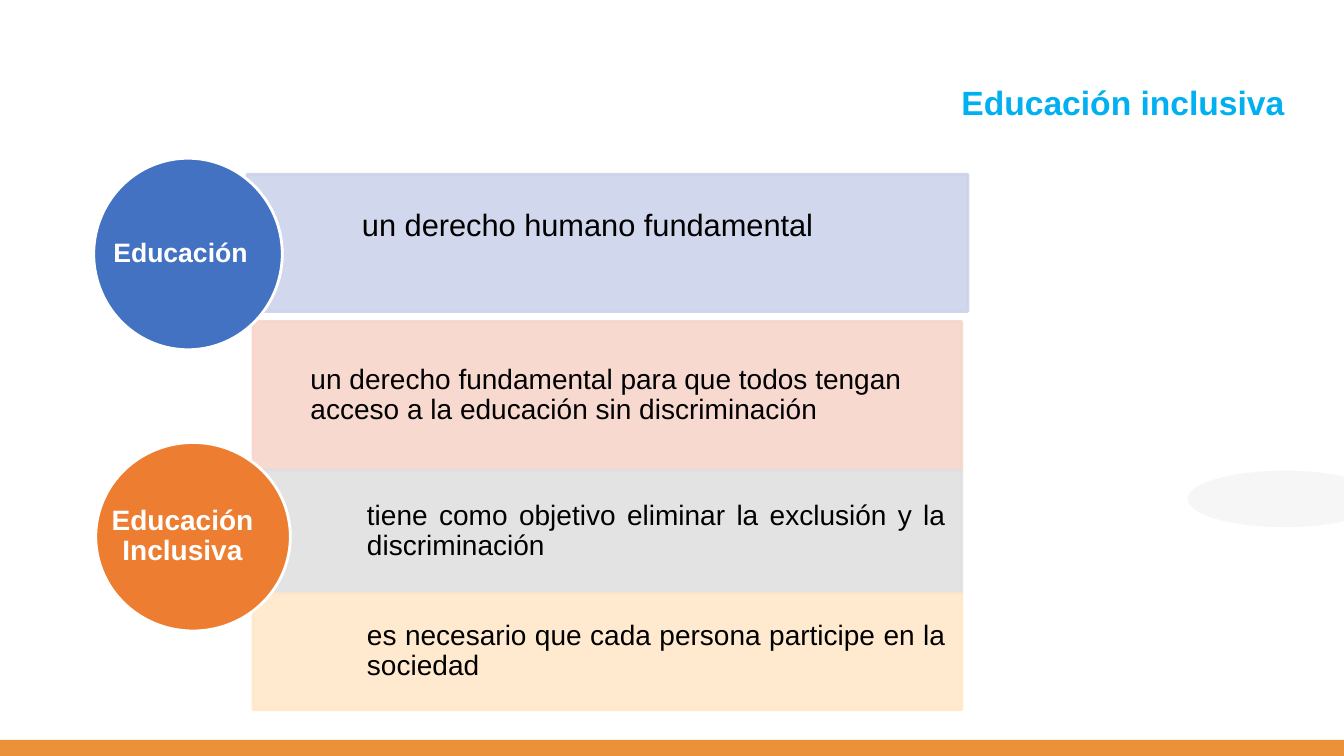
from lxml.etree import SubElement
from pptx import Presentation
from pptx.dml.color import RGBColor as RGB
from pptx.enum.shapes import MSO_SHAPE as Kind
from pptx.enum.text import MSO_ANCHOR as Anchor, PP_ALIGN as Align
from pptx.oxml.ns import qn
from pptx.util import Inches, Pt

WIDE, HIGH = 13.33, 7.5
HUES = {
    "title": "00B0F0", "ink": "000000", "white": "FFFFFF",
    "blue": "4372C3", "orange": "ED7D31", "sky": "CCD3EA",
    "rose": "F7D5CB", "gray": "E0E0E0", "cream": "FFE8CA",
    "foot": "EA9139", "mist": "F5F5F5",
}


def hue(name):
    return RGB.from_string(HUES[name])


def draw(slide, kind, box, fill, line=None, alpha=100):
    shape = slide.shapes.add_shape(kind, *map(Inches, box))
    shape.shadow.inherit = False
    shape.fill.solid()
    shape.fill.fore_color.rgb = hue(fill)
    if line:
        shape.line.color.rgb = hue(line)
        shape.line.width = Pt(2)
    else:
        shape.line.fill.background()
    if alpha < 100:
        for color in shape._element.spPr.iter(qn("a:srgbClr")):
            SubElement(color, qn("a:alpha"), val=str(alpha * 1000))


def write(shape, text, size, color="ink", bold=False, align=Align.LEFT,
          anchor=Anchor.MIDDLE, pads=(0, 0, 0, 0)):
    frame = shape.text_frame
    frame.word_wrap = True
    frame.vertical_anchor = anchor
    (frame.margin_left, frame.margin_top,
     frame.margin_right, frame.margin_bottom) = map(Inches, pads)
    frame.text = text
    para = frame.paragraphs[0]
    para.alignment = align
    para.line_spacing = 0.9
    para.space_before = Pt(0)
    font = para.font
    font.name, font.size, font.bold = "Arial", Pt(size), bold
    font.color.rgb = hue(color)


def label(slide, box, text, size, **form):
    write(slide.shapes.add_textbox(*map(Inches, box)), text, size, **form)


def head(slide, box):
    title = slide.shapes.title
    title.left, title.top, title.width, title.height = map(Inches, box)
    write(title, "Educación inclusiva", 24, color="title", bold=True,
          align=Align.RIGHT, anchor=Anchor.TOP, pads=(0.1, 0.05, 0.1, 0.05))


def decor(slide):
    draw(slide, Kind.OVAL, (11.78, 4.67, 1.92, 0.56), "mist", alpha=88)
    draw(slide, Kind.RECTANGLE, (0, HIGH - 0.16, WIDE, 0.16), "foot")


def band(slide, box, fill, text, indent, size=20, align=Align.LEFT, foot=0.16):
    left, top, width, height = box
    draw(slide, Kind.RECTANGLE, box, fill, line=fill, alpha=89)
    label(slide, (left + indent, top, width - indent, height), text, size,
          align=align, pads=(0, 0.16, 0.16, foot))


def disc(slide, box, fill, text, size, inset, room):
    """Circle whose label starts at inset and is room wide."""
    left, top, width, height = box
    draw(slide, Kind.OVAL, box, fill, line="white")
    label(slide, (left + inset, top, room, height), text, size,
          color="white", bold=True, align=Align.CENTER)


def lower(slide, left, top, width):
    rows = [
        ("rose", 1.47, 0.57, Align.LEFT,
         "un derecho fundamental para que todos tengan acceso a la educación "
         "sin discriminación"),
        ("gray", 1.23, 1.13, Align.JUSTIFY,
         "tiene como objetivo eliminar la exclusión y la discriminación"),
        ("cream", 1.15, 1.13, Align.JUSTIFY,
         "es necesario que cada persona participe en la sociedad"),
    ]
    y = top
    for fill, height, indent, align, text in rows:
        band(slide, (left, y, width, height), fill, text, indent, align=align)
        y += height
    disc(slide, (left - 1.56, top + 1.2, 1.93, 1.87), "orange",
         "Educación Inclusiva", 20, 0.07, 1.58)


def upper(slide, left, top, width):
    band(slide, (left, top, width, 1.36), "sky",
         "un derecho humano fundamental", 1.14, size=22, foot=0.49)
    disc(slide, (left - 1.52, top - 0.16, 1.87, 1.9), "blue",
         "Educación", 19, 0.12, 1.48)


def main():
    deck = Presentation()
    deck.slide_width, deck.slide_height = Inches(WIDE), Inches(HIGH)
    slide = deck.slides.add_slide(deck.slide_layouts[5])
    decor(slide)
    lower(slide, 2.51, 3.19, 7.03)
    upper(slide, 2.45, 1.73, 7.15)
    head(slide, (3.34, 0.81, 9.5, 0.92))
    deck.save("out.pptx")


if __name__ == "__main__":
    main()
